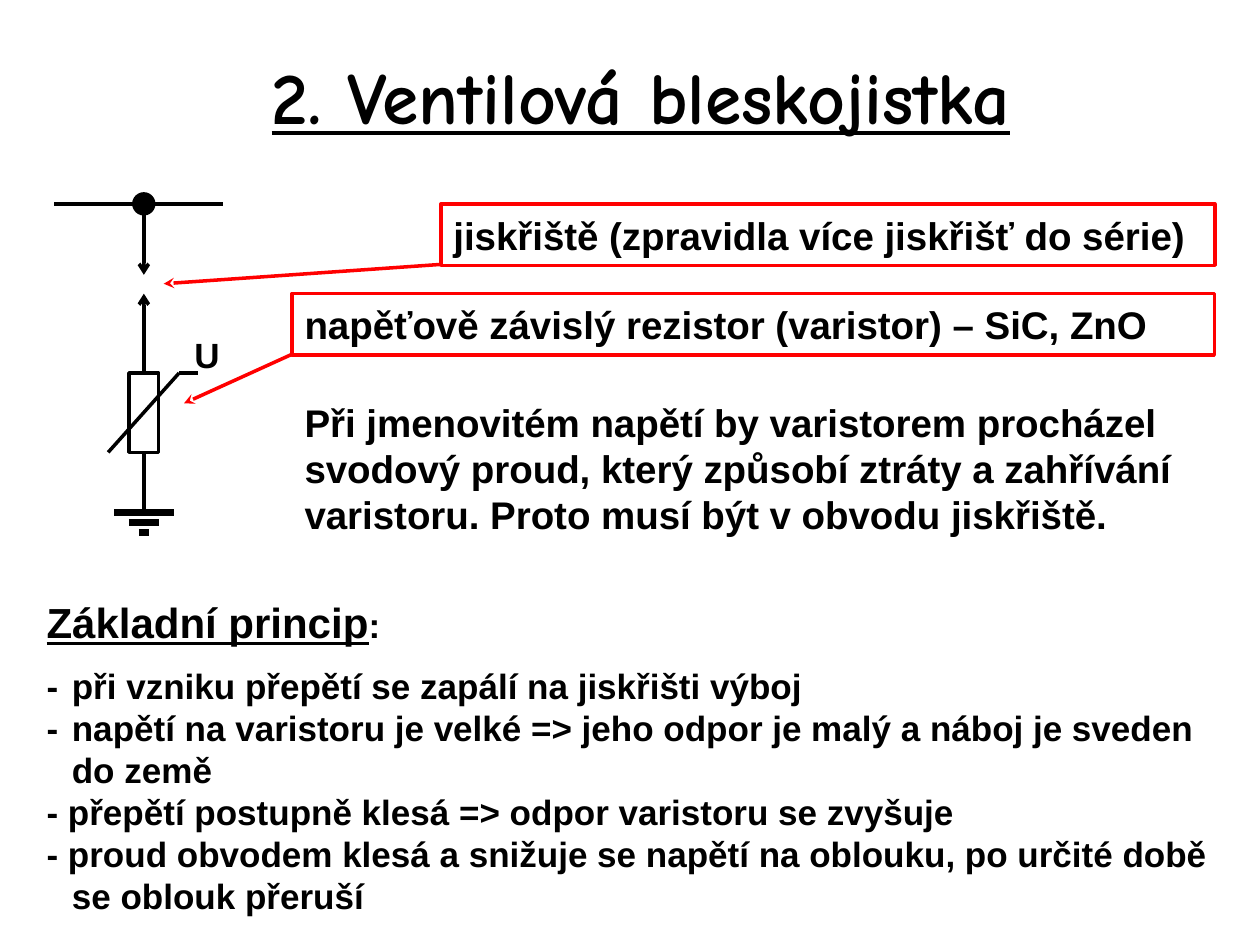
from lxml import etree
from pptx import Presentation
from pptx.dml.color import RGBColor
from pptx.enum.shapes import MSO_CONNECTOR, MSO_SHAPE
from pptx.enum.text import MSO_ANCHOR, PP_ALIGN
from pptx.oxml.ns import qn
from pptx.util import Cm, Pt

BLACK = RGBColor(0, 0, 0)
RED = RGBColor(255, 0, 0)
LINE = MSO_CONNECTOR.STRAIGHT
RECT = MSO_SHAPE.RECTANGLE
OVAL = MSO_SHAPE.OVAL
LEFT, CENTER = PP_ALIGN.LEFT, PP_ALIGN.CENTER
TOP, MIDDLE = MSO_ANCHOR.TOP, MSO_ANCHOR.MIDDLE

AXIS = 2.9
WIRE_Y = 4.11
BODY_TOP, BODY_END = 7.52, 9.12
EARTH_Y = 10.34
HEAD = "Základní princip"
STEPS = [
    "-\tpři vzniku přepětí se zapálí na jiskřišti výboj",
    "-\tnapětí na varistoru je velké => jeho odpor je malý a náboj je sveden do země",
    "- přepětí postupně klesá => odpor varistoru se zvyšuje",
    "- proud obvodem klesá a snižuje se napětí na oblouku, po určité době se oblouk přeruší",
]


def style(run, size, name="Arial", under=False):
    """Format a run as bold black text."""
    font = run.font
    font.name, font.size, font.bold = name, Pt(size), True
    font.underline = under
    font.color.rgb = BLACK


def write(shape, text, size, align=LEFT, anchor=TOP, **look):
    """Put one wrapped paragraph into a shape."""
    frame = shape.text_frame
    frame.word_wrap = True
    frame.vertical_anchor = anchor
    frame.text = text
    para = frame.paragraphs[0]
    para.alignment = align
    style(para.runs[0], size, **look)
    return frame


def label(slide, box, text, size, **look):
    """Add a text box."""
    shape = slide.shapes.add_textbox(*map(Cm, box))
    return write(shape, text, size, **look)


def block(slide, kind, box, color, fill=None):
    """Add an outlined shape, filled on demand."""
    shape = slide.shapes.add_shape(kind, *map(Cm, box))
    shape.shadow.inherit = False
    shape.line.color.rgb = color
    shape.line.width = Pt(2)
    if fill is None:
        shape.fill.background()
    else:
        shape.fill.solid()
        shape.fill.fore_color.rgb = fill
    return shape


def wire(slide, start, end, color=BLACK, width=2, tip=None):
    """Add a straight line with an optional arrow at its end."""
    line = slide.shapes.add_connector(LINE, *map(Cm, start + end))
    line.line.color.rgb = color
    line.line.width = Pt(width)
    props = line._element.spPr
    if tip:
        etree.SubElement(props.find(qn("a:ln")), qn("a:tailEnd"), type=tip)
    etree.SubElement(props, qn("a:effectLst"))


def circuit(slide):
    """Draw the spark gap, the varistor and the earth."""
    wire(slide, (1.09, WIRE_Y), (4.5, WIRE_Y))
    block(slide, OVAL, (AXIS - 0.2, WIRE_Y - 0.2, 0.4, 0.4), BLACK, BLACK)
    wire(slide, (AXIS, 4.32), (AXIS, 5.54), tip="arrow")
    wire(slide, (AXIS, BODY_TOP), (AXIS, 5.92), tip="arrow")
    block(slide, RECT, (AXIS - 0.3, BODY_TOP, 0.6, BODY_END - BODY_TOP), BLACK)
    wire(slide, (2.18, BODY_END), (3.61, BODY_TOP))
    wire(slide, (3.61, BODY_TOP), (4, BODY_TOP))
    wire(slide, (AXIS, BODY_END), (AXIS, EARTH_Y))
    for row, half in enumerate((0.6, 0.3, 0.1)):
        y = EARTH_Y + 0.2 * row
        wire(slide, (AXIS - half, y), (AXIS + half, y), width=4)
    frame = label(slide, (3.78, 6.73, 0.79, 0.84), "U", 20,
                  align=CENTER, anchor=MIDDLE)
    frame.margin_left = frame.margin_right = 0
    frame.margin_top = frame.margin_bottom = 0


def callout(slide, box, text, start, end):
    """Add a red box and the arrow to the part it names."""
    write(block(slide, RECT, box, RED), text, 22, anchor=MIDDLE)
    wire(slide, start, end, RED, tip="stealth")


def steps(slide):
    """Add the heading and the hanging list below it."""
    frame = label(slide, (0.69, 11.91, 24.2, 6.83), HEAD, 24, under=True)
    colon = frame.paragraphs[0].add_run()
    colon.text = ":"
    style(colon, 20)
    for row, text in enumerate(STEPS):
        para = frame.add_paragraph()
        para.text = text
        para.space_before = Pt(0 if row else 10)
        style(para.runs[0], 20)
    for para in frame.paragraphs:
        props = para._p.get_or_add_pPr()
        props.set("marL", str(Cm(0.51)))
        props.set("indent", str(Cm(-0.51)))


def main():
    """Build the slide and save it."""
    deck = Presentation()
    deck.slide_width, deck.slide_height = Cm(25.4), Cm(19.05)
    slide = deck.slides.add_slide(deck.slide_layouts[6])
    label(slide, (1.27, 0.69, 23.29, 2.44), "2. Ventilová bleskojistka", 42,
          align=CENTER, anchor=MIDDLE, name="Comic Neue", under=True)
    circuit(slide)
    callout(slide, (8.89, 4.11, 15.6, 1.24),
            "jiskřiště (zpravidla více jiskřišť do série)",
            (8.89, 5.33), (3.3, 5.72))
    callout(slide, (5.89, 5.92, 18.59, 1.24),
            "napěťově závislý rezistor (varistor) – SiC, ZnO",
            (5.89, 7.14), (3.71, 8.13))
    label(slide, (5.89, 7.92, 18.39, 3.12),
          "Při jmenovitém napětí by varistorem procházel svodový proud, "
          "který způsobí ztráty a zahřívání varistoru. "
          "Proto musí být v obvodu jiskřiště.", 22)
    steps(slide)
    deck.save("out.pptx")


if __name__ == "__main__":
    main()
